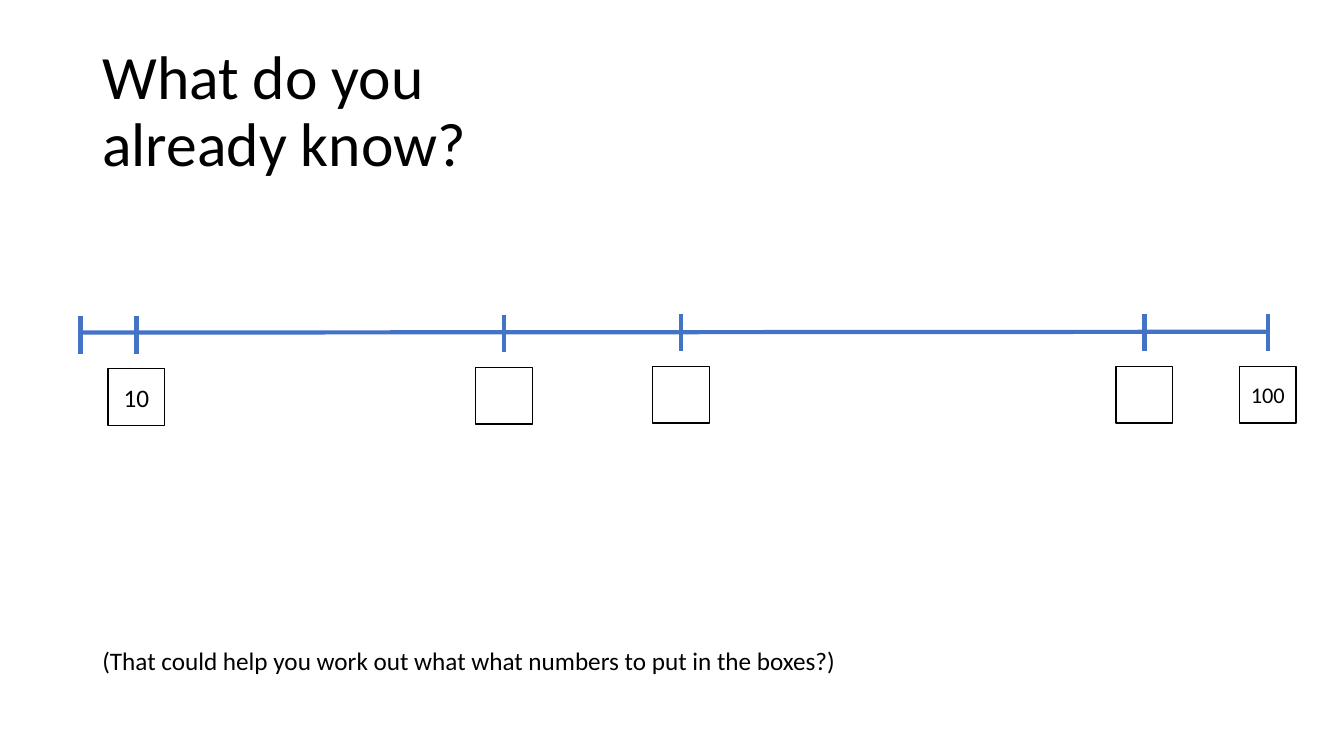
from lxml import etree
from pptx import Presentation
from pptx.dml.color import RGBColor
from pptx.enum.shapes import MSO_CONNECTOR, MSO_SHAPE
from pptx.enum.text import MSO_ANCHOR, PP_ALIGN
from pptx.oxml.ns import qn
from pptx.util import Cm, Pt

STRAIGHT = MSO_CONNECTOR.STRAIGHT
RECTANGLE = MSO_SHAPE.RECTANGLE
MIDDLE = MSO_ANCHOR.MIDDLE
LEFT, CENTER = PP_ALIGN.LEFT, PP_ALIGN.CENTER
BLACK = RGBColor(0x00, 0x00, 0x00)
WHITE = RGBColor(0xFF, 0xFF, 0xFF)
BLUE = RGBColor(0x44, 0x72, 0xC4)

prs = Presentation()
prs.slide_width, prs.slide_height = Cm(33.87), Cm(19.05)
slide = prs.slides.add_slide(prs.slide_layouts[6])


def write(frame, text, size, align=LEFT, spacing=1.0):
    paragraph = frame.paragraphs[0]
    paragraph.alignment = align
    paragraph.line_spacing = spacing
    run = paragraph.add_run()
    run.text = text
    for attribute, value in {"name": "Calibri", "size": Pt(size)}.items():
        setattr(run.font, attribute, value)
    run.font.color.rgb = BLACK


def draw_line(x1, y1, x2, y2):
    line = slide.shapes.add_connector(STRAIGHT, Cm(x1), Cm(y1), Cm(x2), Cm(y2))
    line.line.color.rgb = BLUE
    line.line.width = Pt(3)
    etree.SubElement(line._element.spPr, qn("a:effectLst"))


title = slide.shapes.add_textbox(Cm(2.33), Cm(1.01), Cm(12.14), Cm(3.68)).text_frame
title.word_wrap = True
title.vertical_anchor = MIDDLE
write(title, "What do you already know?", 44, spacing=0.9)

hint = slide.shapes.add_textbox(Cm(2.33), Cm(16.13), Cm(19.23), Cm(1.03)).text_frame
hint.word_wrap = False
write(hint, "(That could help you work out what what numbers to put in the boxes?)", 18)

LINE_START, LINE_END = 2.03, 31.95
TICK_HEIGHT = 0.95
BOX_SIZE = 1.43
BOX_DROP = 1.33

draw_line(LINE_START, 8.38, LINE_END, 8.36)
draw_line(LINE_START, 7.96, LINE_START, 7.96 + TICK_HEIGHT)

boxed_ticks = [
    (3.44, 7.96, "10", 18),
    (12.7, 7.93, "", 18),
    (17.16, 7.9, "", 18),
    (28.84, 7.9, "", 18),
    (LINE_END, 7.9, "100", 16),
]
for x, tick_top, number, size in boxed_ticks:
    draw_line(x, tick_top, x, tick_top + TICK_HEIGHT)
    box = slide.shapes.add_shape(
        RECTANGLE, Cm(x - BOX_SIZE / 2), Cm(tick_top + BOX_DROP), Cm(BOX_SIZE), Cm(BOX_SIZE)
    )
    box.shadow.inherit = False
    box.fill.solid()
    box.fill.fore_color.rgb = WHITE
    box.line.color.rgb = BLACK
    box.line.width = Pt(1)
    box.text_frame.vertical_anchor = MIDDLE
    if number:
        write(box.text_frame, number, size, CENTER)

prs.save("out.pptx")
